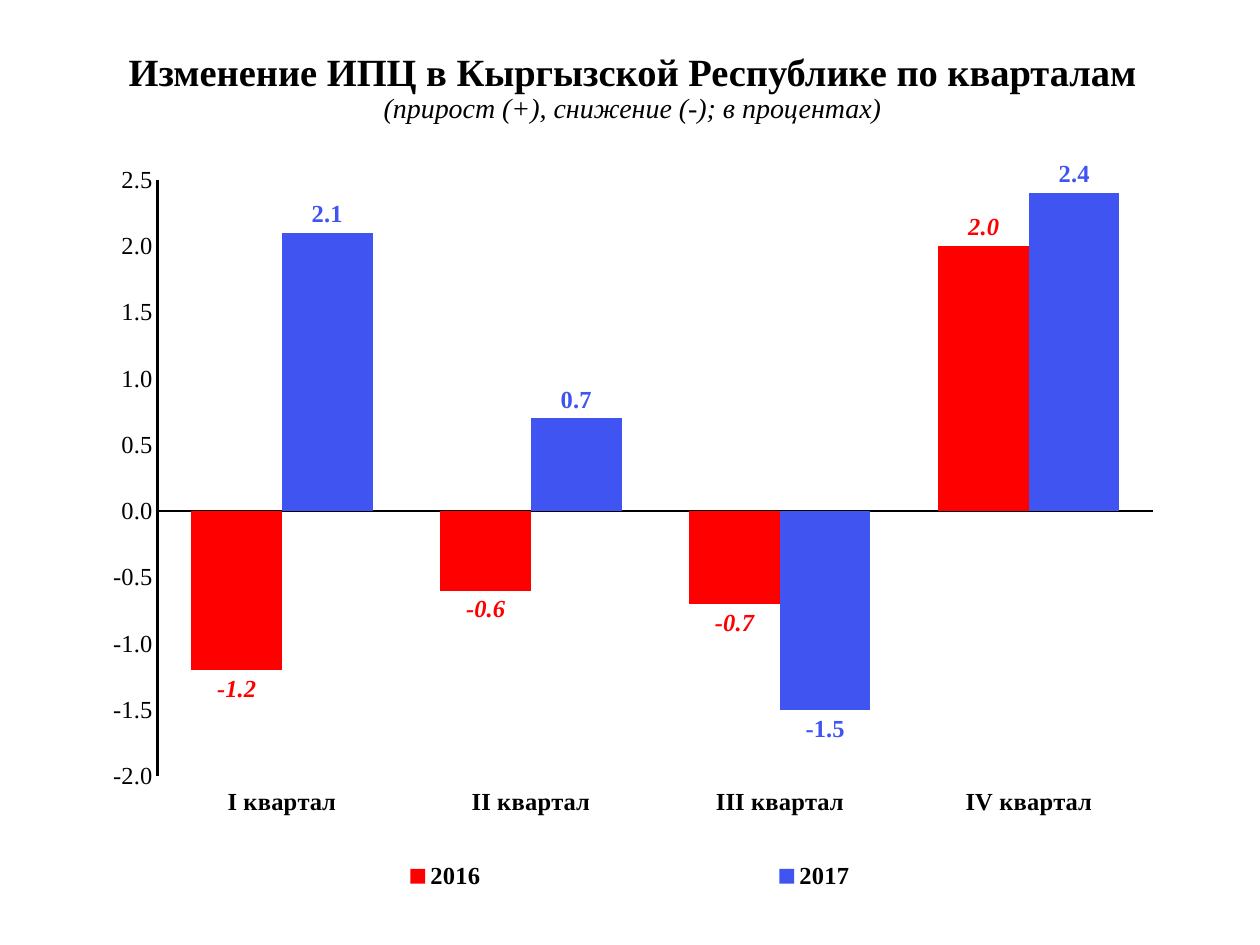
import pptx
import pptx.util
import pptx.chart.data
import pptx.dml.color
import pptx.enum.chart
import pptx.enum.text
import pptx.oxml
from pptx.oxml.ns import nsdecls

TITLE = [
    ("Изменение ИПЦ в Кыргызской Республике по кварталам", "title"),
    ("(прирост (+), снижение (-); в процентах)", "subtitle"),
]
QUARTERS = ["I квартал", "II квартал", "III квартал", "IV квартал"]
SERIES = [
    ("2016", (-1.2, -0.6, -0.7, 2.0), "red"),
    ("2017", (2.1, 0.7, -1.5, 2.4), "blue"),
]
SCALE = dict(minimum_scale=-2, maximum_scale=2.5, major_unit=0.5)

THEME = {
    "font": "Times New Roman",
    "black": "000000", "red": "FF0000", "blue": "3F54F1",
    "title": dict(size=22, bold=True, italic=False),
    "subtitle": dict(size=16, bold=False, italic=True),
    "plain": dict(size=14, bold=False),
    "strong": dict(size=14, bold=True),
    "red_label": dict(size=14, bold=True, italic=True),
    "blue_label": dict(size=14, bold=True, italic=False),
}

SLIDE = (10, 7.5)
TITLE_BOX = (0.071, 0.036, 0.862, 0.116)
CHART_BOX = (0.069, 0.165, 0.862, 0.79)
PLOT_BOX = (0.065, 0.032, 0.917, 0.799)
LEGEND_BOX = (0.03, 0.93, 0.94, 0.07)


def place(box):
    return [pptx.util.Inches(share * SLIDE[i % 2]) for i, share in enumerate(box)]


def rgb(name):
    return pptx.dml.color.RGBColor.from_string(THEME[name])


def style(font, kind, color="black"):
    for key, value in THEME[kind].items():
        setattr(font, key, pptx.util.Pt(value) if key == "size" else value)
    font.name = THEME["font"]
    font.color.rgb = rgb(color)


def apply(target, values):
    for key, value in values.items():
        setattr(target, key, value)


def layout(box, inner=False):
    target = '<c:layoutTarget val="inner"/>' if inner else ""
    modes = '<c:xMode val="edge"/><c:yMode val="edge"/>'
    sizes = "".join(f'<c:{k} val="{v}"/>' for k, v in zip("xywh", box))
    return pptx.oxml.parse_xml(
        f'<c:layout {nsdecls("c")}><c:manualLayout>{target}{modes}{sizes}'
        "</c:manualLayout></c:layout>")


def add_title(s):
    tf = s.shapes.add_textbox(*place(TITLE_BOX)).text_frame
    apply(tf, dict(word_wrap=True, vertical_anchor=pptx.enum.text.MSO_ANCHOR.MIDDLE))
    p = tf.paragraphs[0]
    apply(p, dict(alignment=pptx.enum.text.PP_ALIGN.CENTER, line_spacing=0.9))
    for i, (text, kind) in enumerate(TITLE):
        if i:
            p.add_line_break()
        r = p.add_run()
        r.text = text
        style(r.font, kind)


def add_bars(s):
    data = pptx.chart.data.CategoryChartData(number_format="0.0")
    data.categories = QUARTERS
    for name, values, _ in SERIES:
        data.add_series(name, values)
    chart = s.shapes.add_chart(
        pptx.enum.chart.XL_CHART_TYPE.COLUMN_CLUSTERED, *place(CHART_BOX), data).chart
    apply(chart, dict(has_title=False, has_legend=True))
    style(chart.font, "plain")

    plot = chart.plots[0]
    apply(plot, dict(gap_width=75, overlap=0, vary_by_categories=False))
    for series, (_, _, color) in zip(plot.series, SERIES):
        series.invert_if_negative = False
        series.format.fill.solid()
        series.format.fill.fore_color.rgb = rgb(color)
        labels = series.data_labels
        apply(labels, dict(
            show_value=True, number_format="0.0", number_format_is_linked=False,
            position=pptx.enum.chart.XL_LABEL_POSITION.OUTSIDE_END))
        style(labels.font, f"{color}_label", color)

    tick = pptx.enum.chart.XL_TICK_MARK.NONE
    for axis, kind, width in ((chart.category_axis, "strong", 1.25),
                              (chart.value_axis, "plain", 1.25)):
        apply(axis, dict(has_major_gridlines=False, major_tick_mark=tick,
                         minor_tick_mark=tick))
        style(axis.tick_labels.font, kind)
        axis.format.line.color.rgb = rgb("black")
        axis.format.line.width = pptx.util.Pt(width)
    chart.category_axis.tick_label_position = pptx.enum.chart.XL_TICK_LABEL_POSITION.LOW
    apply(chart.value_axis, SCALE)
    apply(chart.value_axis.tick_labels,
          dict(number_format="0.0", number_format_is_linked=False))

    legend = chart.legend
    apply(legend, dict(position=pptx.enum.chart.XL_LEGEND_POSITION.BOTTOM,
                       include_in_layout=False))
    style(legend.font, "strong")
    area = chart.element.find(".//" + pptx.oxml.ns.qn("c:plotArea"))
    position = chart.element.find(".//" + pptx.oxml.ns.qn("c:legendPos"))
    for old in chart.element.findall(".//" + pptx.oxml.ns.qn("c:layout")):
        old.getparent().remove(old)
    area.insert(0, layout(PLOT_BOX, inner=True))
    position.addnext(layout(LEGEND_BOX))


def main():
    prs = pptx.Presentation()
    prs.slide_width, prs.slide_height = map(pptx.util.Inches, SLIDE)
    s = prs.slides.add_slide(prs.slide_layouts[6])
    add_title(s)
    add_bars(s)
    prs.save("out.pptx")


if __name__ == "__main__":
    main()
